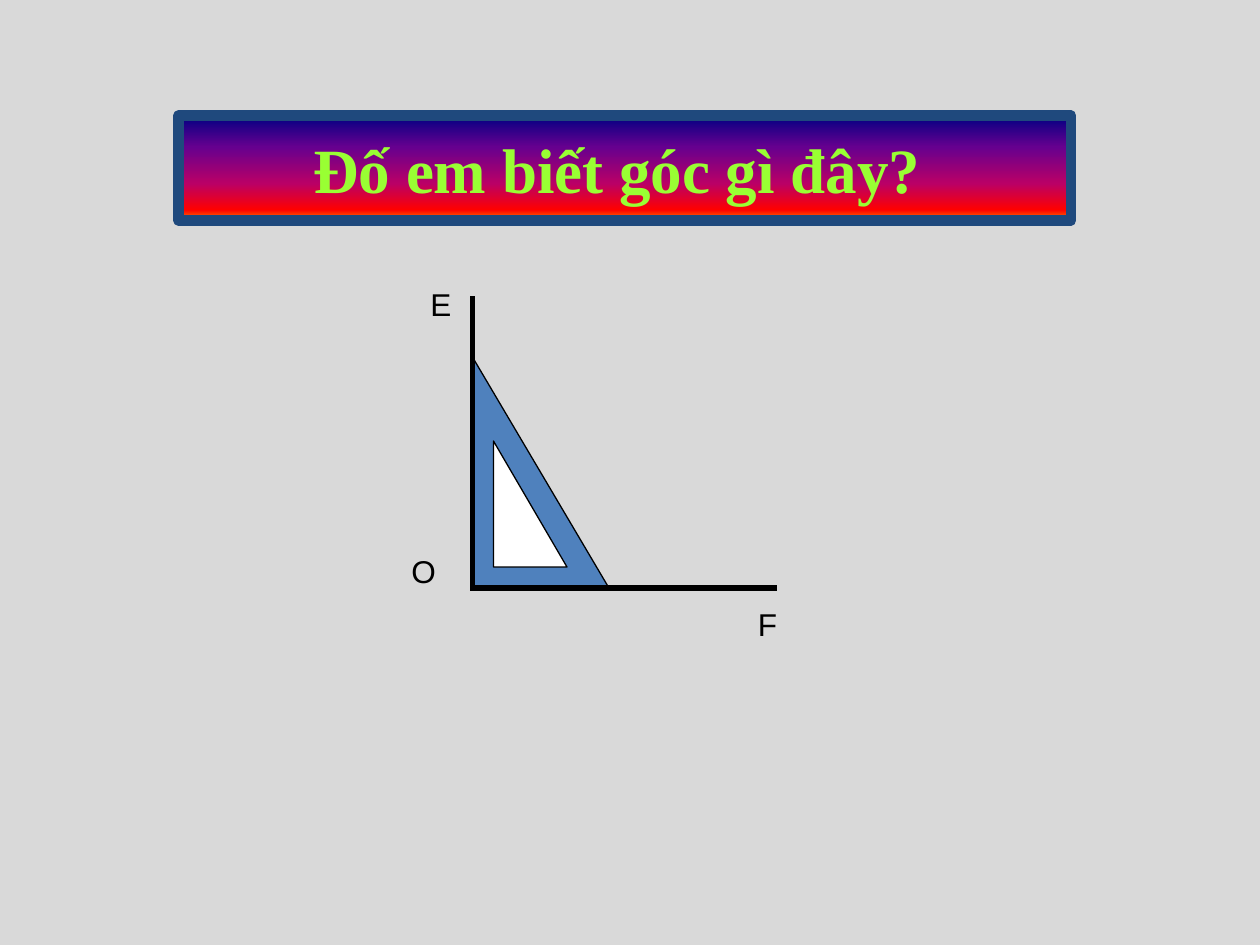
"""Build a quiz slide that asks which angle a set square shows."""
from lxml import etree
from pptx import Presentation
from pptx.dml.color import RGBColor
from pptx.enum.dml import MSO_THEME_COLOR
from pptx.enum.shapes import MSO_CONNECTOR, MSO_SHAPE
from pptx.enum.text import MSO_ANCHOR, MSO_AUTO_SIZE, PP_ALIGN
from pptx.oxml import parse_xml
from pptx.oxml.ns import nsdecls, qn
from pptx.util import Inches, Pt

TRI = MSO_SHAPE.RIGHT_TRIANGLE
LINE = MSO_CONNECTOR.STRAIGHT
MID, TOP = MSO_ANCHOR.MIDDLE, MSO_ANCHOR.TOP
NONE, GROW = MSO_AUTO_SIZE.NONE, MSO_AUTO_SIZE.SHAPE_TO_FIT_TEXT
CENTER, LEFT = PP_ALIGN.CENTER, PP_ALIGN.LEFT
COLORS = {"back": "D9D9D9", "blue": "4F81BD", "white": "FFFFFF",
          "black": "000000", "edge": "1F497D", "lime": "99FF33"}
STOPS = {0: "000082", 30: "66008F", 65: "BA0066", 90: "FF0000", 100: "FF8200"}

deck = Presentation()
deck.slide_width, deck.slide_height = Inches(10), Inches(7.5)
UNIT = deck.slide_width / 120  # the slide is a grid of 120 columns by 90 rows
slide = deck.slides.add_slide(deck.slide_layouts[5])
slide.background.fill.solid()
slide.background.fill.fore_color.rgb = RGBColor.from_string(COLORS["back"])


def grid(*cells):
    return [round(cell * UNIT) for cell in cells]


def write(shape, text, font, size, color, bold, fit, anchor, align):
    frame = shape.text_frame
    frame.word_wrap = False
    frame.auto_size = fit
    frame.vertical_anchor = anchor
    para = frame.paragraphs[0]
    para.alignment = align
    run = para.add_run()
    run.text = text
    run.font.name, run.font.size, run.font.bold = font, Pt(size), bold
    run.font.color.rgb = RGBColor.from_string(COLORS[color])
    return para


title = slide.shapes.title
title.left, title.top, title.width, title.height = grid(17, 11, 85, 10)
title._element.spPr.append(parse_xml(
    f'<a:prstGeom {nsdecls("a")} prst="roundRect"><a:avLst>'
    '<a:gd name="adj" fmla="val 50000"/></a:avLst></a:prstGeom>'))
title.fill.gradient()
title.fill.gradient_angle = 270
stops = title._element.spPr.find(".//" + qn("a:gsLst"))
for stop in list(stops):
    stops.remove(stop)
for share, color in STOPS.items():
    stop = etree.SubElement(stops, qn("a:gs"), pos=str(share * 1000))
    etree.SubElement(stop, qn("a:srgbClr"), val=color)
title.line.color.rgb = RGBColor.from_string(COLORS["edge"])
title.line.width = Pt(6)
para = write(title, "Đố em biết góc gì đây? ", "Times New Roman", 36, "lime",
             True, NONE, MID, CENTER)
props = para._p.get_or_add_pPr()
props.set("marL", str(Inches(0.38)))
props.set("indent", str(-Inches(0.38)))

for cells, color in (((45, 34, 13, 22), "blue"), ((47, 42, 7, 12), "white")):
    square = slide.shapes.add_shape(TRI, *grid(*cells))
    square.shadow.inherit = False
    square.fill.solid()
    if color == "blue":
        square.fill.fore_color.theme_color = MSO_THEME_COLOR.ACCENT_1
    else:
        square.fill.fore_color.rgb = RGBColor.from_string(COLORS[color])
    square.line.color.rgb = RGBColor.from_string(COLORS["black"])
    square.line.width = Pt(0.75)

for ends in ((45, 28.2, 45, 56.25), (45, 56, 74, 56)):
    ray = slide.shapes.add_connector(LINE, *grid(*ends))
    ray.line.color.rgb = RGBColor.from_string(COLORS["black"])
    ray.line.width = Pt(3)
    etree.SubElement(ray._element.spPr, qn("a:effectLst"))

for name, col, row in (("E", 39.8, 26.6), ("O", 38, 52), ("F", 71, 57)):
    label = slide.shapes.add_textbox(*grid(col, row, 5.6, 6.8))
    write(label, name, "Arial", 18, "black", False, GROW, TOP, LEFT)

deck.save("out.pptx")
